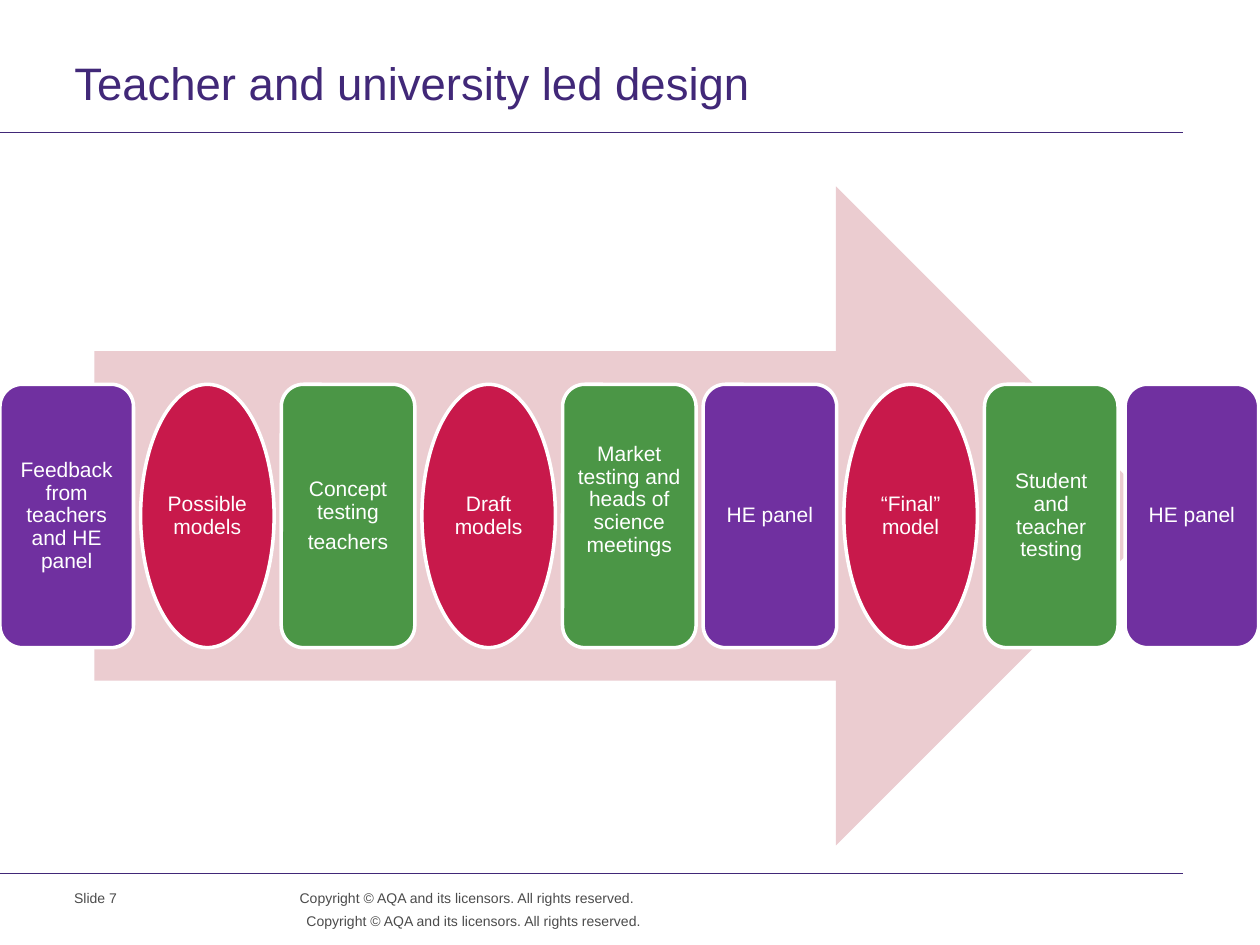
from pptx import Presentation
from pptx import util as u
from pptx.dml.color import RGBColor
from pptx.enum import shapes, text
from pptx.oxml.ns import qn
from lxml import etree

INDIGO = RGBColor(0x41, 0x28, 0x78)
PURPLE = RGBColor(0x70, 0x30, 0xA0)
CRIMSON = RGBColor(0xC8, 0x19, 0x4B)
GREEN = RGBColor(0x4B, 0x96, 0x46)
PINK = RGBColor(0xEB, 0xCC, 0xD0)
GREY = RGBColor(0x4B, 0x4B, 0x4B)
WHITE = RGBColor(0xFF, 0xFF, 0xFF)

ROUNDED = shapes.MSO_SHAPE.ROUNDED_RECTANGLE
OVAL = shapes.MSO_SHAPE.OVAL
LEFT, CENTER, RIGHT = text.PP_ALIGN.LEFT, text.PP_ALIGN.CENTER, text.PP_ALIGN.RIGHT
MIDDLE, TOP = text.MSO_ANCHOR.MIDDLE, text.MSO_ANCHOR.TOP


def write(holder, lines, size, color, insets, align=LEFT, anchor=TOP, spacing=None):
    frame = holder.text_frame
    left, top, right, bottom = map(u.Inches, insets)
    frame_format = {"word_wrap": True, "vertical_anchor": anchor,
                    "margin_left": left, "margin_top": top,
                    "margin_right": right, "margin_bottom": bottom}
    for key, value in frame_format.items():
        setattr(frame, key, value)
    frame.text = "\n".join(lines)
    font_format = {"name": "Arial", "size": u.Pt(size)}
    for number, paragraph in enumerate(frame.paragraphs):
        paragraph.alignment = align
        paragraph.line_spacing = spacing
        if number:
            paragraph.space_before = u.Pt(4.2)
        for key, value in font_format.items():
            setattr(paragraph.font, key, value)
        paragraph.font.color.rgb = color


prs = Presentation()
prs.slide_width, prs.slide_height = u.Inches(10), u.Inches(7.5)
slide = prs.slides.add_slide(prs.slide_layouts[6])

# Rules under the title and above the footer
for y in (1.05, 6.93):
    rule = slide.shapes.add_connector(shapes.MSO_CONNECTOR.STRAIGHT, 0, u.Inches(y),
                                      u.Inches(9.39), u.Inches(y))
    rule.line.color.rgb = INDIGO
    rule.line.width = u.Pt(0.6)
    etree.SubElement(rule._element.spPr, qn("a:effectLst"))

# Title
title = slide.shapes.add_textbox(*map(u.Inches, (0.59, 0.48, 8.8, 0.47)))
write(title, ["Teacher and university led design"], 26, INDIGO, (0, 0, 0.1, 0),
      spacing=u.Pt(28))

# Arrow behind the design stages
arrow = slide.shapes.add_shape(shapes.MSO_SHAPE.RIGHT_ARROW,
                               *map(u.Inches, (0.75, 1.48, 8.5, 5.23)))
arrow.shadow.inherit = False
arrow.fill.solid()
arrow.fill.fore_color.rgb = PINK
arrow.line.fill.background()

# Design stages: outline, colour, bottom inset, paragraphs
stages = [
    (ROUNDED, PURPLE, 0.05, ["Feedback from teachers and HE panel"]),
    (OVAL, CRIMSON, 0.05, ["Possible models"]),
    (ROUNDED, GREEN, 0.05, ["Concept testing", "teachers"]),
    (OVAL, CRIMSON, 0.05, ["Draft models"]),
    (ROUNDED, GREEN, 0.3, ["Market testing and heads of science meetings"]),
    (ROUNDED, PURPLE, 0.05, ["HE panel"]),
    (OVAL, CRIMSON, 0.05, ["“Final” model"]),
    (ROUNDED, GREEN, 0.05, ["Student and teacher testing"]),
    (ROUNDED, PURPLE, 0.05, ["HE panel"]),
]
stage_width = 1.06
pitch = (9.99 - stage_width) / (len(stages) - 1)
for index, (outline, color, bottom, lines) in enumerate(stages):
    stage = slide.shapes.add_shape(outline, u.Inches(index * pitch), u.Inches(3.05),
                                   u.Inches(stage_width), u.Inches(2.09))
    stage.shadow.inherit = False
    stage.fill.solid()
    stage.fill.fore_color.rgb = color
    stage.line.color.rgb = WHITE
    stage.line.width = u.Pt(2)
    write(stage, lines, 12, WHITE, (0.05, 0.05, 0.05, bottom), CENTER, MIDDLE, 0.9)

# Footer
rights = "Copyright © AQA and its licensors. All rights reserved."
padded = (0.1, 0.05, 0.1, 0.05)
footers = [
    ((2.16, 7.24, 2.93, 0.26), rights, (0, 0, 0, 0), RIGHT, u.Pt(10)),
    ((2.28, 7.01, 2.93, 0.26), rights, padded, LEFT, None),
    ((0.49, 7.01, 1.56, 0.38), "Slide 7", padded, LEFT, None),
]
for place, wording, insets, align, spacing in footers:
    footer = slide.shapes.add_textbox(*map(u.Inches, place))
    write(footer, [wording], 8, GREY, insets, align, spacing=spacing)

prs.save("out.pptx")
